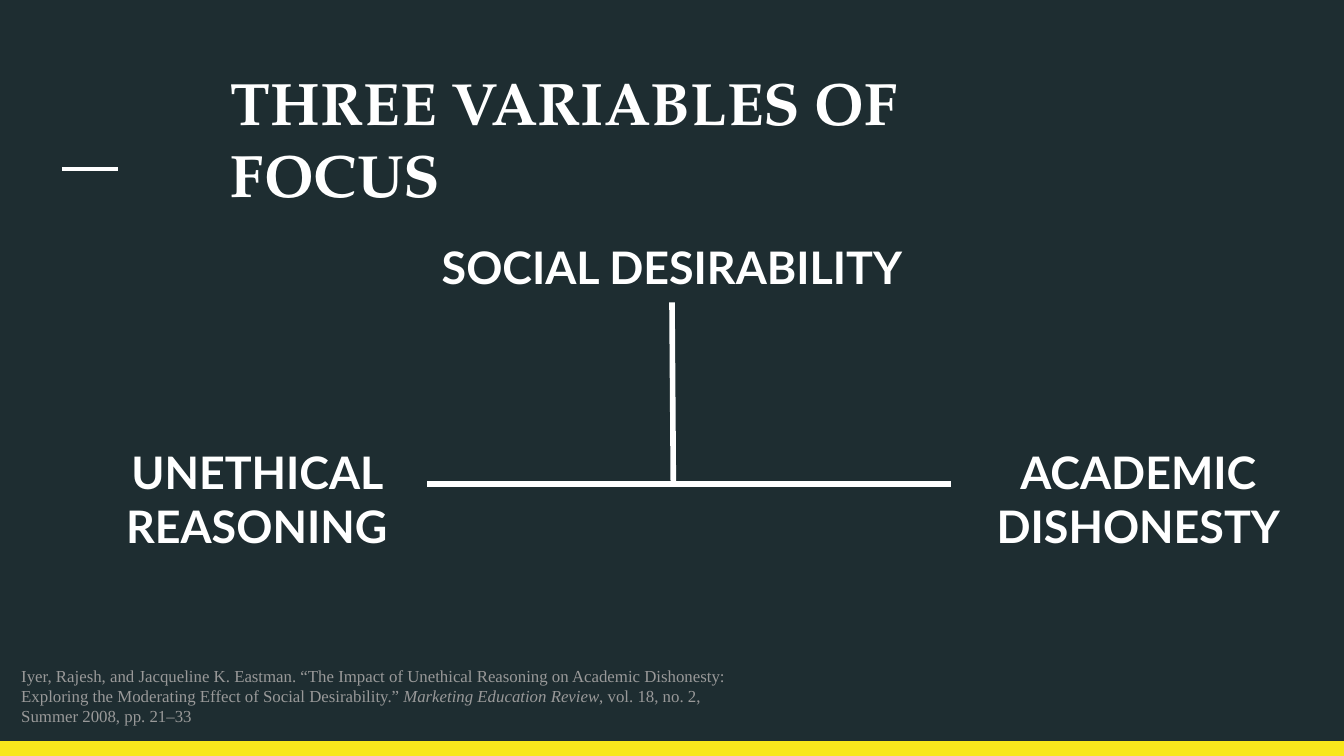
"""Build the slide on the three variables of focus and how they connect."""
from dataclasses import dataclass

from lxml.etree import SubElement
from pptx import Presentation
from pptx.dml.color import RGBColor
from pptx.enum.shapes import MSO_CONNECTOR, MSO_SHAPE
from pptx.enum.text import MSO_ANCHOR, PP_ALIGN
from pptx.oxml.ns import qn
from pptx.slide import Slide
from pptx.util import Inches, Pt

SLIDE_WIDTH = Inches(10)
SLIDE_HEIGHT = SLIDE_WIDTH * 9 // 16
NIGHT = RGBColor(0x1E, 0x2D, 0x31)
YELLOW = RGBColor(0xF8, 0xE7, 0x1C)
WHITE = RGBColor(0xFF, 0xFF, 0xFF)
GRAY = RGBColor(0x99, 0x99, 0x99)


@dataclass(frozen=True)
class Style:
    font: str
    size: float
    color: RGBColor
    bold: bool = False
    align: PP_ALIGN = PP_ALIGN.LEFT


@dataclass(frozen=True)
class Piece:
    text: str
    italic: bool = False


@dataclass(frozen=True)
class Block:
    box: tuple[float, float, float, float]
    lines: tuple[tuple[Piece, ...], ...]
    style: Style
    spacing: float = 1.0


@dataclass(frozen=True)
class Link:
    start: tuple[float, float]
    end: tuple[float, float]
    width: float
    kind: MSO_CONNECTOR = MSO_CONNECTOR.STRAIGHT


HEADING = Style("TeX Gyre Pagella", 32, WHITE, bold=True)
VARIABLE = Style("Lato", 24, WHITE, bold=True, align=PP_ALIGN.CENTER)
CITATION = Style("Times New Roman", 9, GRAY)

BLOCKS = (
    Block((1.62, 0.39, 6.75, 0.71), ((Piece("THREE VARIABLES OF FOCUS"),),), HEADING),
    Block((2.92, 1.62, 4.16, 0.62), ((Piece("SOCIAL DESIRABILITY"),),), VARIABLE, 1.15),
    Block((0.64, 3.21, 2.54, 0.78), ((Piece("UNETHICAL REASONING"),),), VARIABLE),
    Block((7.08, 3.21, 2.78, 0.78), ((Piece("ACADEMIC"),), (Piece("DISHONESTY"),)), VARIABLE),
    Block(
        (0.06, 4.85, 5.66, 0.62),
        ((
            Piece(
                "Iyer, Rajesh, and Jacqueline K. Eastman. “The Impact of Unethical "
                "Reasoning on Academic Dishonesty: Exploring the Moderating Effect "
                "of Social Desirability.” "
            ),
            Piece("Marketing Education Review", italic=True),
            Piece(", vol. 18, no. 2, Summer 2008, pp. 21–33"),
        ),),
        CITATION,
    ),
)

LINKS = (
    Link((0.46, 1.26), (0.88, 1.26), 2.25),
    Link((3.18, 3.6), (7.08, 3.6), 3, MSO_CONNECTOR.CURVE),
    Link((5, 2.25), (5.01, 3.59), 3),
)


def add_footer_band(slide: Slide) -> None:
    height = Inches(0.11)
    band = slide.shapes.add_shape(
        MSO_SHAPE.RECTANGLE, 0, SLIDE_HEIGHT - height, SLIDE_WIDTH, height
    )
    band.shadow.inherit = False
    band.fill.solid()
    band.fill.fore_color.rgb = YELLOW
    band.line.fill.background()


def add_link(slide: Slide, link: Link) -> None:
    points = (Inches(value) for value in (*link.start, *link.end))
    connector = slide.shapes.add_connector(link.kind, *points)
    connector.line.color.rgb = WHITE
    connector.line.width = Pt(link.width)
    SubElement(connector.element.spPr, qn("a:effectLst"))


def add_block(slide: Slide, block: Block) -> None:
    frame = slide.shapes.add_textbox(*(Inches(value) for value in block.box)).text_frame
    frame.word_wrap = True
    frame.vertical_anchor = MSO_ANCHOR.TOP
    frame.margin_left = frame.margin_right = Inches(0.1)
    frame.margin_top = frame.margin_bottom = Inches(0.1)
    paragraph = frame.paragraphs[0]
    paragraph.alignment = block.style.align
    paragraph.line_spacing = block.spacing
    for index, line in enumerate(block.lines):
        if index:
            paragraph.add_line_break()
        for piece in line:
            run = paragraph.add_run()
            run.text = piece.text
            run.font.name = block.style.font
            run.font.size = Pt(block.style.size)
            run.font.bold = block.style.bold
            run.font.italic = piece.italic
            run.font.color.rgb = block.style.color


def main() -> None:
    presentation = Presentation()
    presentation.slide_width = SLIDE_WIDTH
    presentation.slide_height = SLIDE_HEIGHT
    slide = presentation.slides.add_slide(presentation.slide_layouts[6])
    slide.background.fill.solid()
    slide.background.fill.fore_color.rgb = NIGHT
    add_footer_band(slide)
    for link in LINKS:
        add_link(slide, link)
    for block in BLOCKS:
        add_block(slide, block)
    presentation.save("out.pptx")


if __name__ == "__main__":
    main()
